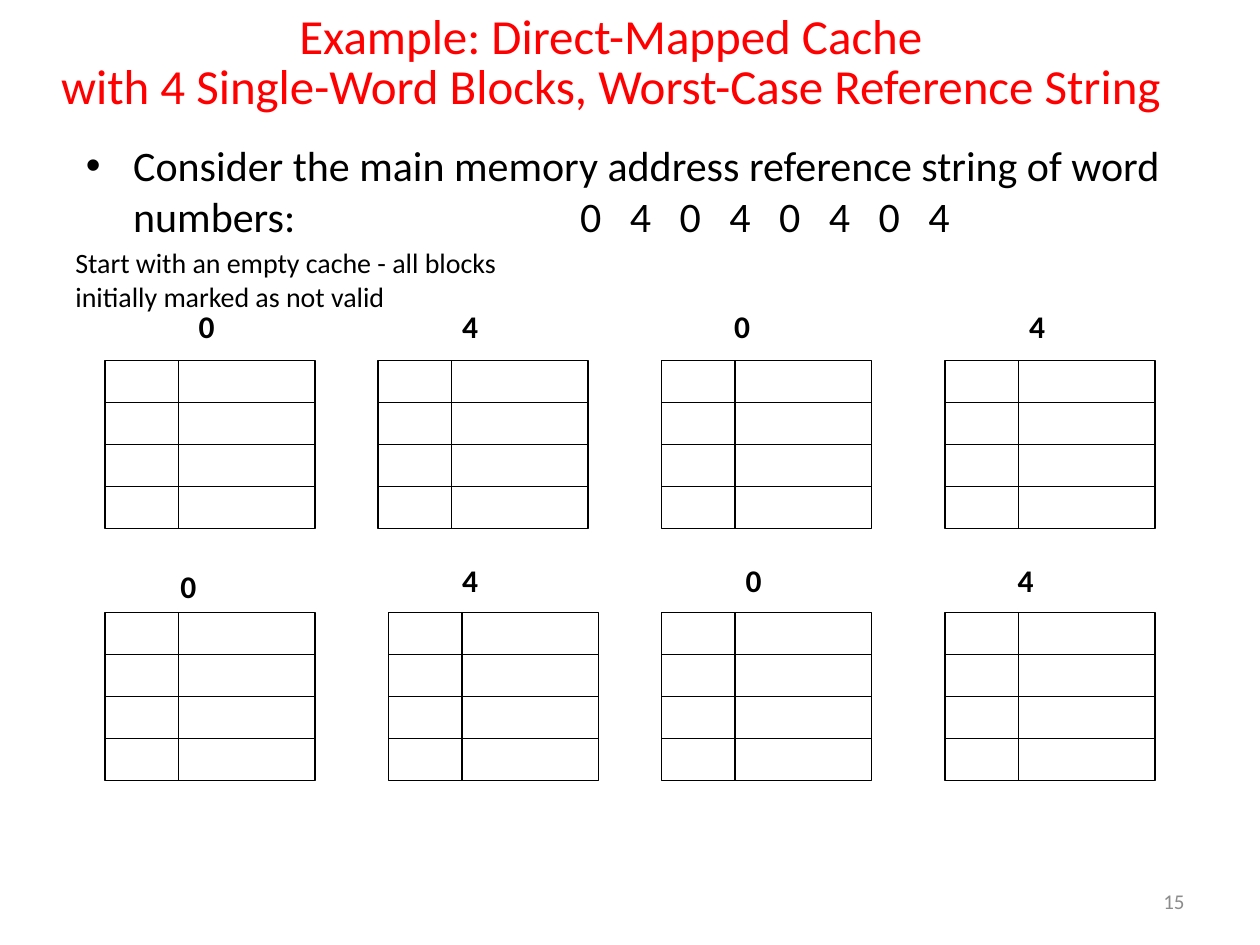
from lxml.etree import SubElement
from pptx import Presentation
from pptx.dml.color import RGBColor
from pptx.enum.shapes import MSO_CONNECTOR, MSO_SHAPE
from pptx.enum.text import MSO_ANCHOR, MSO_AUTO_SIZE, PP_ALIGN
from pptx.oxml.ns import qn
from pptx.util import Pt

BLACK = RGBColor(0x00, 0x00, 0x00)
RED = RGBColor(0xFF, 0x00, 0x00)
GRAY = RGBColor(0x8C, 0x8C, 0x8C)


def add_span(para, text, size, color=BLACK, bold=False):
    span = para.add_run()
    span.text = text
    span.font.name = "Calibri"
    span.font.size = Pt(size)
    span.font.color.rgb = color
    span.font.bold = bold
    return span


def add_box(left, top, width, height, wrap=True):
    box = page.shapes.add_textbox(Pt(left), Pt(top), Pt(width), Pt(height))
    box.text_frame.word_wrap = wrap
    return box.text_frame


deck = Presentation()
deck.slide_width, deck.slide_height = Pt(720), Pt(540)
page = deck.slides.add_slide(deck.slide_layouts[5])

# Title
title = page.shapes.title
title.left, title.top, title.width, title.height = Pt(15), Pt(0), Pt(668), Pt(74)
frame = title.text_frame
frame.auto_size = MSO_AUTO_SIZE.NONE
frame.vertical_anchor = MSO_ANCHOR.MIDDLE
para = frame.paragraphs[0]
para.alignment = PP_ALIGN.CENTER
para.line_spacing = 0.85
add_span(para, "Example: Direct-Mapped Cache", 28, RED)
para.add_line_break()
add_span(para, "with 4 Single-Word Blocks, Worst-Case Reference String", 28, RED)

# Bullet with the reference string; letter spacing widens the gaps
para = add_box(42, 76.3, 642, 79).paragraphs[0]
para.space_before = Pt(4.8)
props = para._p.get_or_add_pPr()
props.set("marL", str(Pt(27)))
props.set("indent", str(-Pt(27)))
SubElement(props, qn("a:buFont"), typeface="Arial")
SubElement(props, qn("a:buChar"), char="•")
add_span(para, "Consider the main memory address reference string of word numbers:", 24)
for index, address in enumerate("04040404"):
    gap = add_span(para, " ", 24)
    gap.font._element.set("spc", "15730" if index == 0 else "1085")
    add_span(para, address, 24)

# Starting state
para = add_box(36, 137, 270, 46).paragraphs[0]
add_span(para, "Start with an empty cache - all blocks initially marked as not valid", 16)

# Cache states: top, then (grid left, label left, label top, address)
ROW_HEIGHT, ROWS = 24, 4
TAG_WIDTH, DATA_WIDTH = 42, 78
cache_rows = [
    (206, [(60, 106.5, 172, "0"), (216, 257, 172, "4"),
           (378, 412.5, 172, "0"), (540, 581, 172, "4")]),
    (350, [(60, 96, 320.5, "0"), (222, 257, 317, "4"),
           (378, 419, 317, "0"), (540, 574.5, 317, "4")]),
]
for top, caches in cache_rows:
    for left, label_left, label_top, address in caches:
        label = add_box(label_left, label_top, 24.5, 29, wrap=False)
        add_span(label.paragraphs[0], address, 18, bold=True)

        for x, width in ((left, TAG_WIDTH), (left + TAG_WIDTH, DATA_WIDTH)):
            column = page.shapes.add_shape(
                MSO_SHAPE.RECTANGLE, Pt(x), Pt(top), Pt(width), Pt(ROWS * ROW_HEIGHT))
            column.shadow.inherit = False
            column.fill.background()
            column.line.color.rgb = BLACK
            column.line.width = Pt(1)

            for row in range(1, ROWS):
                y = top + row * ROW_HEIGHT
                divider = page.shapes.add_connector(
                    MSO_CONNECTOR.STRAIGHT, Pt(x), Pt(y), Pt(x + width), Pt(y))
                divider.line.color.rgb = BLACK
                divider.line.width = Pt(1)
                SubElement(divider._element.spPr, qn("a:effectLst"))
                if row * 2 == ROWS:
                    divider.begin_connect(column, 1)
                    divider.end_connect(column, 3)

# Page number
frame = add_box(516, 500.5, 168, 29)
frame.vertical_anchor = MSO_ANCHOR.MIDDLE
para = frame.paragraphs[0]
para.alignment = PP_ALIGN.RIGHT
add_span(para, "15", 12, GRAY)

deck.save("out.pptx")
